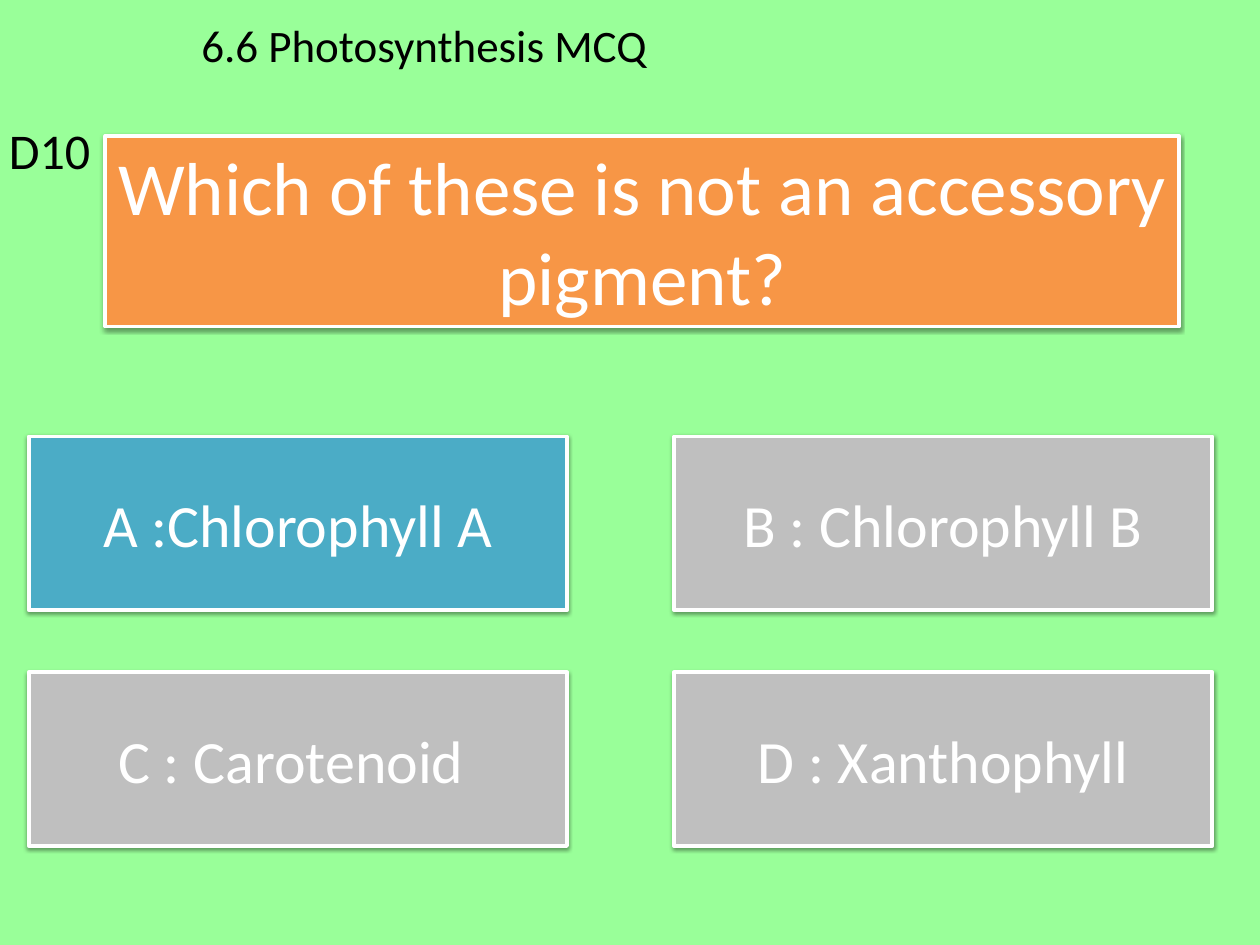
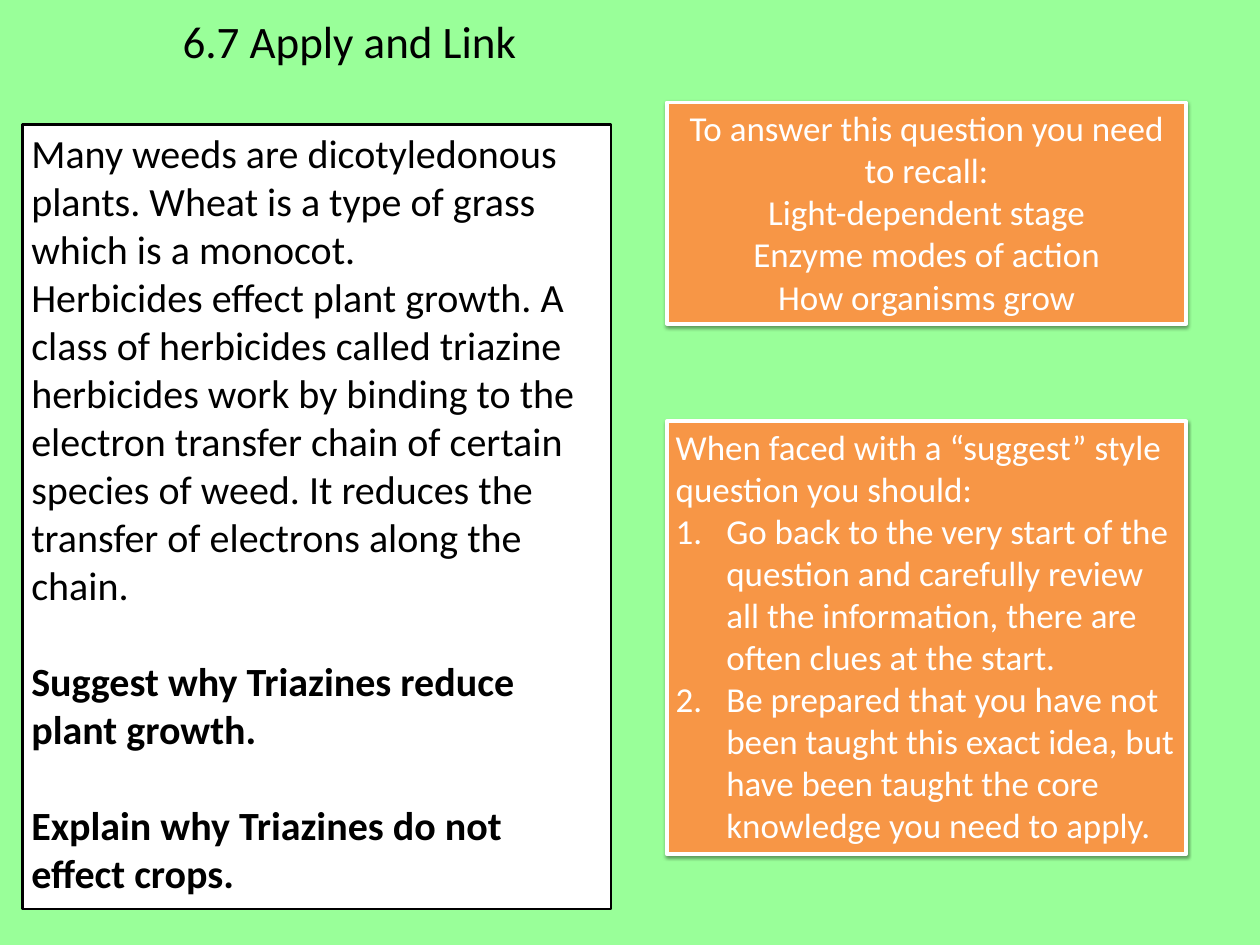
from dataclasses import dataclass
from typing import NamedTuple

from lxml import etree
from pptx import Presentation
from pptx.dml.color import RGBColor
from pptx.enum import shapes, text
from pptx.oxml.ns import qn
from pptx.util import Pt


@dataclass(frozen=True)
class Theme:
    font: str = "Calibri"
    background: str = "99FF99"
    prompt: str = "F79646"
    highlight: str = "4BACC6"
    muted: str = "BFBFBF"
    light: str = "FFFFFF"
    dark: str = "000000"
    question_size: int = 60
    answer_size: int = 48
    label_size: int = 40
    title_size: int = 36
    passage_size: int = 32
    advice_size: int = 28


THEME = Theme()
LEFT, CENTER = text.PP_ALIGN.LEFT, text.PP_ALIGN.CENTER
TOP, MIDDLE = text.MSO_ANCHOR.TOP, text.MSO_ANCHOR.MIDDLE


class Box(NamedTuple):
    """Place and size in points."""
    left: float
    top: float
    width: float
    height: float

    def lengths(self) -> list:
        return [Pt(value) for value in self]


class Para(NamedTuple):
    words: str
    bold: bool = False
    numbered: bool = False
    space_before: float = 0


@dataclass(frozen=True)
class Panel:
    box: Box
    paras: list[Para]
    size: int
    fill: str = THEME.prompt
    line: str = THEME.light
    line_width: float = 3
    color: str = THEME.light
    align: text.PP_ALIGN = CENTER
    anchor: text.MSO_ANCHOR = TOP
    shadow: bool = True


def rgb(value: str) -> RGBColor:
    return RGBColor.from_string(value)


def add_number(paragraph) -> None:
    """Give the paragraph an automatic 1. 2. 3. number and a hanging indent."""
    properties = paragraph._p.get_or_add_pPr()
    properties.set("marL", str(Pt(40.5)))
    properties.set("indent", str(Pt(-40.5)))
    etree.SubElement(properties, qn("a:buFont"), typeface="+mj-lt")
    etree.SubElement(properties, qn("a:buAutoNum"), type="arabicPeriod")


def add_soft_shadow(shape) -> None:
    effects = shape._element.spPr.find(qn("a:effectLst"))
    shadow = etree.SubElement(effects, qn("a:outerShdw"), blurRad=str(Pt(3.1)),
                              dist=str(Pt(1.6)), dir="5400000", rotWithShape="0")
    color = etree.SubElement(shadow, qn("a:srgbClr"), val=THEME.dark)
    etree.SubElement(color, qn("a:alpha"), val="38000")


def write(frame, paras: list[Para], size: int, color: str, align=LEFT, anchor=TOP) -> None:
    frame.word_wrap = True
    frame.vertical_anchor = anchor
    frame.text = "\n".join(para.words for para in paras)
    for paragraph, para in zip(frame.paragraphs, paras):
        paragraph.alignment = align
        if para.space_before:
            paragraph.space_before = Pt(para.space_before)
        if para.numbered:
            add_number(paragraph)
        for run in paragraph.runs:
            run.font.name = THEME.font
            run.font.size = Pt(size)
            run.font.bold = para.bold
            run.font.color.rgb = rgb(color)


def add_panel(slide, panel: Panel) -> None:
    shape = slide.shapes.add_shape(shapes.MSO_SHAPE.RECTANGLE, *panel.box.lengths())
    shape.fill.solid()
    shape.fill.fore_color.rgb = rgb(panel.fill)
    shape.line.color.rgb = rgb(panel.line)
    shape.line.width = Pt(panel.line_width)
    shape.shadow.inherit = False
    if panel.shadow:
        add_soft_shadow(shape)
    write(shape.text_frame, panel.paras, panel.size, panel.color, panel.align, panel.anchor)


def add_label(slide, box: Box, words: str, size: int) -> None:
    label = slide.shapes.add_textbox(*box.lengths())
    write(label.text_frame, [Para(words)], size, THEME.dark)


def add_green_slide(deck):
    slide = deck.slides.add_slide(deck.slide_layouts[6])
    slide.background.fill.solid()
    slide.background.fill.fore_color.rgb = rgb(THEME.background)
    return slide


def build_quiz(deck) -> None:
    slide = add_green_slide(deck)
    question = [Para("Which of these is not an accessory pigment?")]
    add_panel(slide, Panel(Box(84.3, 108.7, 859, 152.6), question, THEME.question_size))
    answers = ["A :Chlorophyll A", "B : Chlorophyll B", "C : Carotenoid ", "D : Xanthophyll"]
    correct = 0
    for index, answer in enumerate(answers):
        row, column = divmod(index, 2)
        box = Box(23 + column * 516.3, 349.2 + row * 188.6, 430.6, 139)
        fill = THEME.highlight if index == correct else THEME.muted
        add_panel(slide, Panel(box, [Para(answer)], THEME.answer_size, fill, anchor=MIDDLE))
    add_label(slide, Box(0, 92.2, 84.3, 55.4), "D10", THEME.label_size)
    add_label(slide, Box(154, 10.8, 410.4, 51), "6.6 Photosynthesis MCQ", THEME.title_size)


def build_application(deck) -> None:
    slide = add_green_slide(deck)
    task_gap = 38.4
    passage = [
        Para("Many weeds are dicotyledonous plants. Wheat is a type of grass which is a monocot."),
        Para("Herbicides effect plant growth. A class of herbicides called triazine herbicides "
             "work by binding to the electron transfer chain of certain species of weed. "
             "It reduces the transfer of electrons along the chain."),
        Para("Suggest why Triazines reduce plant growth.", bold=True, space_before=task_gap),
        Para("Explain why Triazines do not effect crops.", bold=True, space_before=task_gap),
    ]
    recall = [
        Para("To answer this question you need to recall:"),
        Para("Light-dependent stage"),
        Para("Enzyme modes of action"),
        Para("How organisms grow"),
    ]
    advice = [
        Para("When faced with a “suggest” style question you should:"),
        Para("Go back to the very start of the question and carefully review all the "
             "information, there are often clues at the start.", numbered=True),
        Para("Be prepared that you have not been taught this exact idea, but have been taught "
             "the core knowledge you need to apply.", numbered=True),
    ]
    add_panel(slide, Panel(Box(18, 99.4, 470.9, 627.8), passage, THEME.passage_size,
                           fill=THEME.light, line=THEME.dark, line_width=2,
                           color=THEME.dark, align=LEFT, shadow=False))
    add_label(slide, Box(139, 7.2, 350, 51), "6.7 Apply and Link", THEME.title_size)
    add_panel(slide, Panel(Box(533.5, 82, 415.4, 177), recall, THEME.advice_size))
    add_panel(slide, Panel(Box(533.5, 337, 415.4, 346.3), advice, THEME.advice_size, align=LEFT))


def main() -> None:
    deck = Presentation()
    deck.slide_width, deck.slide_height = Pt(1008), Pt(756)
    build_quiz(deck)
    build_application(deck)
    deck.save("out.pptx")


if __name__ == "__main__":
    main()
